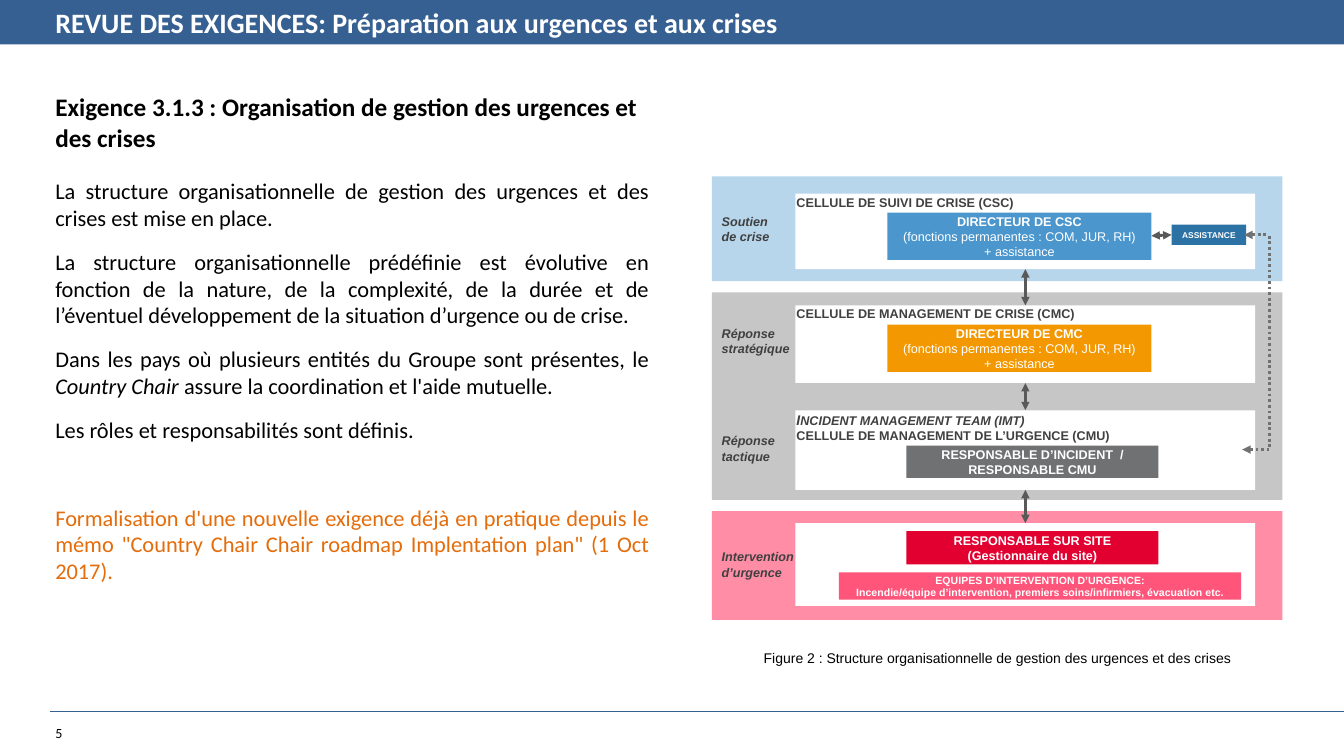
from itertools import pairwise

from lxml import etree
from pptx import Presentation
from pptx.dml.color import RGBColor
from pptx.enum.dml import MSO_LINE
from pptx.enum.shapes import MSO_CONNECTOR, MSO_SHAPE
from pptx.enum.text import MSO_ANCHOR, PP_ALIGN
from pptx.oxml.ns import qn
from pptx.util import Pt

PX = 9144  # 100 px to the inch
W, H = 1333, 750
RECT, STRAIGHT = MSO_SHAPE.RECTANGLE, MSO_CONNECTOR.STRAIGHT
TOP, MIDDLE = MSO_ANCHOR.TOP, MSO_ANCHOR.MIDDLE
LEFT, CENTER, JUSTIFY = PP_ALIGN.LEFT, PP_ALIGN.CENTER, PP_ALIGN.JUSTIFY
DOTTED = MSO_LINE.ROUND_DOT
NAVY, WHITE, BLACK, ORANGE = "376092", "FFFFFF", "000000", "E46C0A"
DARK, GREY = "404040", "707173"


def rgb(value):
    return RGBColor.from_string(value)


def write(sp, paragraphs, anchor=TOP, inset=(10, 5), **base):
    """Each paragraph is (runs, format); each run is (text, font changes)."""
    tf = sp.text_frame
    tf.word_wrap = True
    tf.vertical_anchor = anchor
    for side, gap in zip(("left", "top", "right", "bottom"), inset * 2):
        setattr(tf, f"margin_{side}", gap * PX)
    for i, (runs, layout) in enumerate(paragraphs):
        p = tf.add_paragraph() if i else tf.paragraphs[0]
        for name, value in layout.items():
            setattr(p, name, value)
        for text, changes in runs:
            r = p.add_run()
            r.text = text
            look = {**base, **changes}
            r.font.color.rgb = rgb(look.pop("color"))
            r.font.size = Pt(look.pop("size"))
            for name, value in look.items():
                setattr(r.font, name, value)


def lines(*texts, align=LEFT):
    return [([(text, {})], {"alignment": align}) for text in texts]


def text_box(s, x, y, w, h, paragraphs, **look):
    sp = s.shapes.add_textbox(x * PX, y * PX, w * PX, h * PX)
    write(sp, paragraphs, **look)


def rect(s, x, y, w, h, fill, paragraphs=(), **look):
    sp = s.shapes.add_shape(RECT, x * PX, y * PX, w * PX, h * PX)
    sp.shadow.inherit = False
    sp.fill.solid()
    sp.fill.fore_color.rgb = rgb(fill)
    sp.line.fill.background()
    if paragraphs:
        write(sp, paragraphs, **look)


def line(s, x1, y1, x2, y2, color, width=2, dash=None, arrows=()):
    cn = s.shapes.add_connector(STRAIGHT, x1 * PX, y1 * PX, x2 * PX, y2 * PX)
    cn.line.color.rgb = rgb(color)
    cn.line.width = Pt(width)
    if dash:
        cn.line.dash_style = dash
    sp_pr = cn._element.spPr
    for end in arrows:  # headEnd comes before tailEnd
        etree.SubElement(sp_pr.find(qn("a:ln")), qn(f"a:{end}")).set("type", "triangle")
    etree.SubElement(sp_pr, qn("a:effectLst"))


def frame(s, w, h):
    # Footer
    line(s, 50, h - 44, w, h - 44, NAVY, width=0.75)
    text_box(s, 45, h - 36, 71, 27, lines("5"), name="Calibri", size=10, color=BLACK)
    # Title bar
    rect(s, 0, 0, w, 44, NAVY)
    text_box(s, 45, 0, 1047, 44,
             lines("REVUE DES EXIGENCES: Préparation aux urgences et aux crises"),
             anchor=MIDDLE, name="Calibri", size=20, color=WHITE, bold=True)


def requirement(s, x, y, w, h):
    body = {"alignment": JUSTIFY, "space_before": Pt(6), "space_after": Pt(6)}
    heading = {"size": 18, "bold": True}
    paragraphs = [
        ([("Exigence 3.1.3 : Organisation de gestion des urgences et des crises", heading)],
         {"space_after": Pt(12)}),
        ([("La structure organisationnelle de gestion des urgences et des crises "
           "est mise en place.", {})], body),
        ([("La structure organisationnelle prédéfinie est évolutive en fonction de la nature, "
           "de la complexité, de la durée et de l’éventuel développement de la situation "
           "d’urgence ou de crise.", {})], body),
        ([("Dans les pays où plusieurs entités du Groupe sont présentes, le ", {}),
          ("Country Chair", {"italic": True}),
          (" assure la coordination et l'aide mutuelle.", {})], body),
        ([("Les rôles et responsabilités sont définis.", {})], body),
        ([("Formalisation d'une nouvelle exigence déjà en pratique depuis le mémo "
           "\"Country Chair Chair roadmap Implentation plan\" (1 Oct 2017).",
           {"color": ORANGE})], {**body, "space_before": Pt(37.5)}),
    ]
    text_box(s, x, y, w, h, paragraphs, name="Calibri", size=16, color=BLACK)


def organisation(s, x, y, w, h):
    arial = {"name": "Arial", "size": 9, "bold": True}
    both = ("headEnd", "tailEnd")

    # Coloured bands
    for top, height, fill in ((0, 104, "B7D5EB"), (115, 206, "C6C6C7"), (332, 108, "FF8DA6")):
        rect(s, x, y + top, w, height, fill)

    # White cells with their headings
    team = [([("I", {"italic": True, "size": 10}),
              ("NCIDENT MANAGEMENT TEAM (IMT)", {"italic": True})], {"alignment": LEFT})]
    cells = [
        (17, 75, lines("CELLULE DE SUIVI DE CRISE (CSC)")),
        (128, 77, lines("CELLULE DE MANAGEMENT DE CRISE (CMC)")),
        (232, 79, team + lines("CELLULE DE MANAGEMENT DE L’URGENCE (CMU)")),
        (344, 82, ()),
    ]
    for top, height, heading in cells:
        rect(s, x + 83, y + top, 456, height, WHITE, heading, inset=(1, 1), color=DARK, **arial)

    # Level labels
    for top, width, label in ((32, 83, "Soutien de crise"), (143, 96, "Réponse stratégique"),
                              (250, 83, "Réponse tactique"), (365, 113, "Intervention d’urgence")):
        text_box(s, x, y + top, width, 40, lines(label), color=DARK, italic=True, **arial)

    # Directors
    for top, unit, fill in ((36, "CSC", "4A96CD"), (147, "CMC", "F39800")):
        duties = [([(text, {"bold": False})], {"alignment": CENTER})
                  for text in ("(fonctions permanentes : COM, JUR, RH)", "+ assistance")]
        rect(s, x + 174, y + top, 262, 47, fill,
             lines(f"DIRECTEUR DE {unit}", align=CENTER) + duties,
             inset=(1, 1), color=WHITE, **arial)

    # Other roles
    roles = [
        (193, 267, 250, 32, GREY, 9, TOP, ("RESPONSABLE D’INCIDENT  /", "RESPONSABLE CMU")),
        (193, 352, 250, 33, "E20031", 9, MIDDLE,
         ("RESPONSABLE SUR SITE", "(Gestionnaire du site)")),
        (126, 393, 399, 27, "FF557A", 7.5, MIDDLE,
         ("EQUIPES D’INTERVENTION D’URGENCE:",
          "Incendie/équipe d’intervention, premiers soins/infirmiers, évacuation etc.")),
        (456, 48, 74, 20, "2D72A4", 6, MIDDLE, ("ASSISTANCE",)),
    ]
    for left, top, width, height, fill, size, anchor, texts in roles:
        rect(s, x + left, y + top, width, height, fill, lines(*texts, align=CENTER),
             anchor=anchor, inset=(1, 1), color=WHITE, **{**arial, "size": size})

    # Arrows between cells, and to the assistance
    for (top, height, _), (next_top, _, _) in pairwise(cells):
        line(s, x + 311, y + top + height, x + 311, y + next_top, "595959", arrows=both)
    line(s, x + 436, y + 59, x + 456, y + 58, "595959", arrows=both)

    # Dotted link from the assistance to the incident team
    for x1, y1, x2, y2, arrows in ((553, 59, 553, 271, ()), (526, 271, 553, 271, both[:1]),
                                   (528, 58, 551, 58, both[:1])):
        line(s, x + x1, y + y1, x + x2, y + y2, GREY, dash=DOTTED, arrows=arrows)

    # Caption
    text_box(s, x, y + h + 24, w, 27,
             lines("Figure 2 : Structure organisationnelle de gestion des urgences et des crises",
                   align=CENTER), name="Arial", size=10, color=BLACK)


def main():
    prs = Presentation()
    prs.slide_width, prs.slide_height = W * PX, H * PX
    s = prs.slides.add_slide(prs.slide_layouts[6])
    frame(s, W, H)
    requirement(s, 45, 86, 609, 588)
    organisation(s, 706, 175, 566, 440)
    prs.save("out.pptx")


if __name__ == "__main__":
    main()
